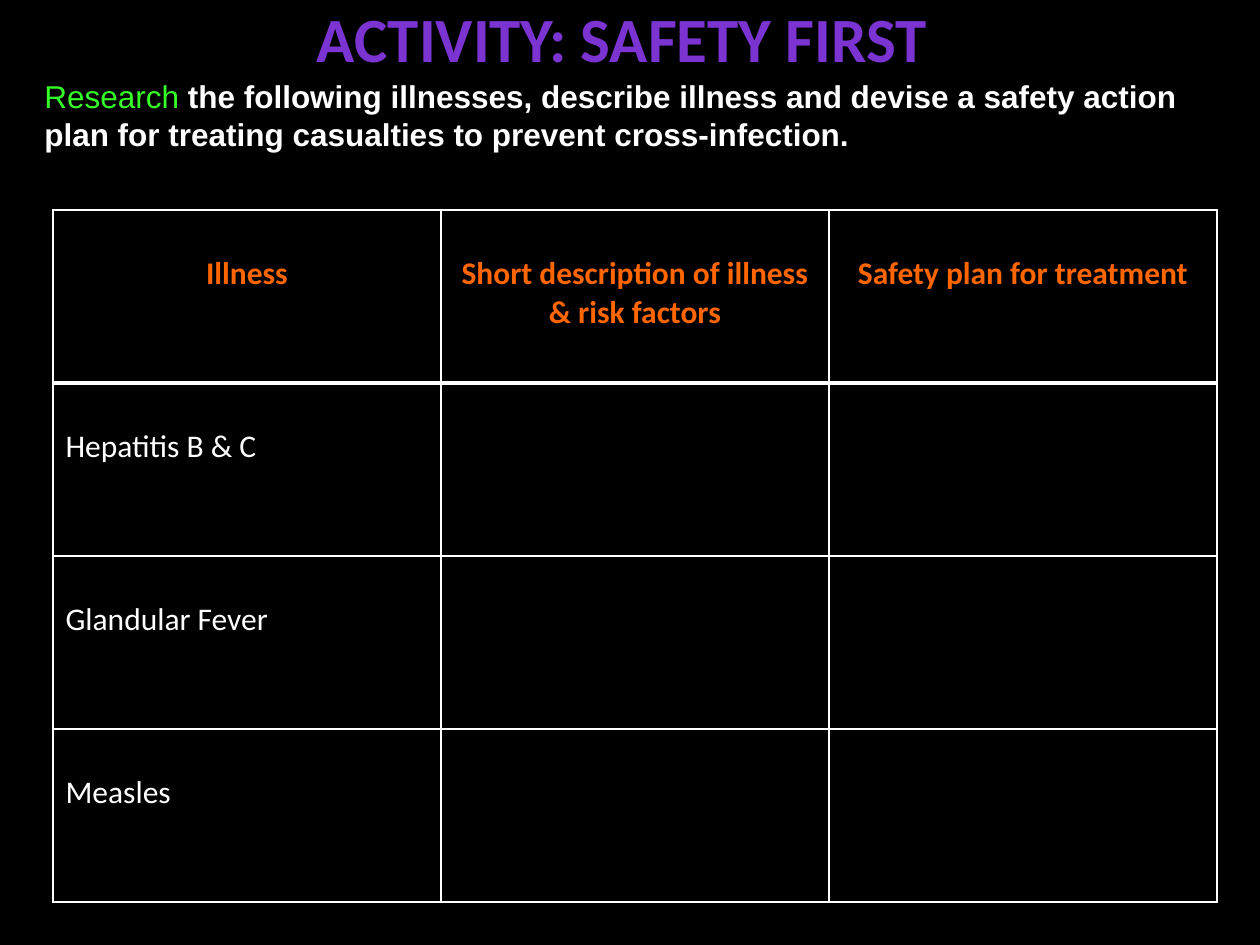
from lxml.etree import SubElement
from pptx import Presentation
from pptx.dml.color import RGBColor
from pptx.enum.text import MSO_ANCHOR, PP_ALIGN
from pptx.oxml.ns import qn
from pptx.util import Pt

PX = 914400 / 126
WHITE, BLACK, PURPLE, GREEN, ORANGE = "FFFFFF", "000000", "7B34D2", "36FF29", "FF6600"

HEADING = "ACTIVITY: SAFETY FIRST"
TASK = [
    ("Research", dict(color=GREEN)),
    (" the following illnesses, describe illness and devise a safety action plan "
     "for treating casualties to prevent cross-infection.", dict(color=WHITE, bold=True)),
]
COLUMNS = ["Illness", "Short description of illness & risk factors", "Safety plan for treatment"]
ILLNESSES = ["Hepatitis B & C", "Glandular Fever", "Measles"]

HEADING_BOX = (55, -42, 1134, 158)
TASK_BOX = (32, 71, 1197, 242)
GRID_LEFT, GRID_TOP, COLUMN_WIDTH, ROW_HEIGHT = 53, 210, 388, 173
CELL_TOP_MARGIN = 45


def px(value):
    return round(value * PX)


def rgb(color):
    return RGBColor.from_string(color)


def write(paragraph, text, font="Calibri", size=18, color=WHITE, bold=False, align=PP_ALIGN.LEFT):
    paragraph.alignment = align
    run = paragraph.add_run()
    run.text = text
    run.font.name = font
    run.font.size = Pt(size)
    run.font.bold = bold
    run.font.color.rgb = rgb(color)


def place(shape, box):
    shape.left, shape.top, shape.width, shape.height = map(px, box)


def draw_borders(cell, **widths):
    properties = cell._tc.get_or_add_tcPr()
    for position, (side, width) in enumerate(widths.items()):
        line = SubElement(properties, qn(f"a:ln{side}"), w=str(Pt(width)))
        fill = SubElement(line, qn("a:solidFill"))
        SubElement(fill, qn("a:srgbClr"), val=WHITE)
        properties.insert(position, line)


def main():
    deck = Presentation()
    deck.slide_width, deck.slide_height = px(1260), px(945)
    slide = deck.slides.add_slide(deck.slide_layouts[5])
    slide.background.fill.solid()
    slide.background.fill.fore_color.rgb = rgb(BLACK)

    heading = slide.shapes.title
    place(heading, HEADING_BOX)
    heading.text_frame.vertical_anchor = MSO_ANCHOR.MIDDLE
    write(heading.text_frame.paragraphs[0], HEADING, size=36, color=PURPLE, bold=True,
          align=PP_ALIGN.CENTER)

    task = slide.shapes.add_textbox(*map(px, TASK_BOX)).text_frame
    task.word_wrap = True
    for text, style in TASK:
        write(task.paragraphs[0], text, font="Arial", **style)

    rows = [COLUMNS] + [[illness, "", ""] for illness in ILLNESSES]
    grid = slide.shapes.add_table(
        len(rows), len(COLUMNS), px(GRID_LEFT), px(GRID_TOP),
        px(COLUMN_WIDTH * len(COLUMNS)), px(ROW_HEIGHT * len(rows))).table
    grid.horz_banding = False
    for r, row in enumerate(rows):
        for c, text in enumerate(row):
            cell = grid.cell(r, c)
            cell.fill.background()
            cell.margin_top = px(CELL_TOP_MARGIN)
            draw_borders(cell, L=1, R=1, T=3 if r == 1 else 1, B=3 if r == 0 else 1)
            if text:
                style = dict(color=ORANGE, bold=True, align=PP_ALIGN.CENTER) if r == 0 else {}
                write(cell.text_frame.paragraphs[0], text, **style)

    deck.save("out.pptx")


if __name__ == "__main__":
    main()
